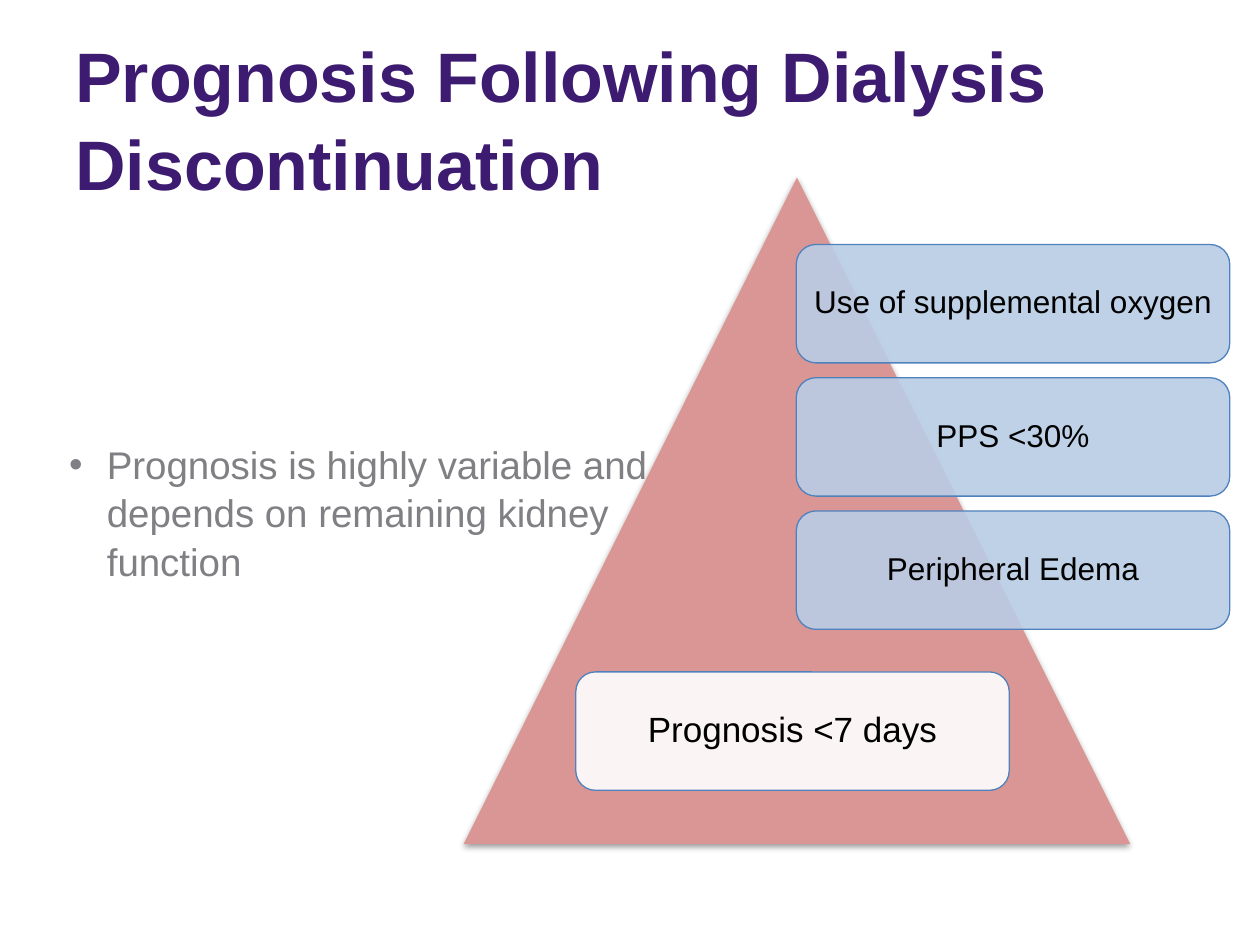
from lxml.etree import SubElement
from pptx import Presentation
from pptx.dml.color import RGBColor
from pptx.enum.shapes import MSO_SHAPE as Preset
from pptx.enum.text import MSO_ANCHOR as Anchor, PP_ALIGN as Align
from pptx.oxml import parse_xml
from pptx.oxml.ns import nsdecls, qn
from pptx.util import Inches, Pt

COLORS = {
    "title": "3C1B71",
    "body": "807F83",
    "text": "000000",
    "triangle": "D99694",
    "factor": "B9CDE5",
    "outcome": "FFFFFF",
    "border": "4F81BD",
}

presentation = Presentation()
presentation.slide_width, presentation.slide_height = Inches(10), Inches(7.5)
slide = presentation.slides.add_slide(presentation.slide_layouts[6])


def area(left, top, width, height):
    """Turn percentages of the slide's size into lengths."""
    column, row = presentation.slide_width / 100, presentation.slide_height / 100
    return [round(v) for v in (left * column, top * row, width * column, height * row)]


def write(shape, text, size, color, bold=False, align=Align.LEFT,
          anchor=Anchor.MIDDLE, spacing=1.05, margins=(0.1, 0.05), bullet=None):
    frame = shape.text_frame
    frame.word_wrap = True
    frame.vertical_anchor = anchor
    frame.margin_left = frame.margin_right = Inches(margins[0])
    frame.margin_top = frame.margin_bottom = Inches(margins[1])
    paragraph = frame.paragraphs[0]
    paragraph.alignment = align
    paragraph.line_spacing = spacing
    if bullet:
        properties = paragraph._p.get_or_add_pPr()
        properties.set("marL", str(Inches(0.5)))
        properties.set("indent", str(Inches(-0.3)))
        SubElement(properties, qn("a:buFont"), typeface="Arial")
        SubElement(properties, qn("a:buChar"), char=bullet)
    run = paragraph.add_run()
    run.text = text
    run.font.name = "Arial"
    run.font.size = Pt(size)
    run.font.bold = bold
    run.font.color.rgb = RGBColor.from_string(COLORS[color])


title = slide.shapes.add_textbox(*area(5, 4, 90, 16.67))
write(title, "Prognosis Following Dialysis Discontinuation", 40, "title", bold=True)

body = slide.shapes.add_textbox(*area(2.5, 45.73, 50, 16.67))
write(body, "Prognosis is highly variable and depends on remaining kidney function",
      22, "body", anchor=Anchor.TOP, bullet="•")

pyramid = slide.shapes.add_group_shape()
triangle = pyramid.shapes.add_shape(Preset.ISOSCELES_TRIANGLE, *area(36.8, 18.8, 52.9, 70.53))
triangle.fill.solid()
triangle.fill.fore_color.rgb = RGBColor.from_string(COLORS["triangle"])
triangle.line.fill.background()
triangle.element.spPr.append(parse_xml(
    f'<a:effectLst {nsdecls("a")}>'
    f'<a:outerShdw blurRad="{Pt(3.1)}" dist="{Pt(1.6)}" dir="5400000" rotWithShape="0">'
    '<a:srgbClr val="000000"><a:alpha val="38000"/></a:srgbClr>'
    '</a:outerShdw></a:effectLst>'))

factors = ["Use of supplemental oxygen", "PPS <30%", "Peripheral Edema"]
FACTOR_TOP, FACTOR_PITCH = 25.87, 14.1
boxes = [(text, 63.2, FACTOR_TOP + i * FACTOR_PITCH, "factor", 18, 0.07)
         for i, text in enumerate(factors)]
boxes.append(("Prognosis <7 days", 45.7, 71.1, "outcome", 20, 0.08))

for text, left, top, color, size, margin in boxes:
    box = pyramid.shapes.add_shape(Preset.ROUNDED_RECTANGLE, *area(left, top, 34.4, 12.53))
    box.shadow.inherit = False
    box.fill.solid()
    box.fill.fore_color.rgb = RGBColor.from_string(COLORS[color])
    fill_color = box.element.spPr.find(qn("a:solidFill")).find(qn("a:srgbClr"))
    SubElement(fill_color, qn("a:alpha"), val="90000")
    box.line.color.rgb = RGBColor.from_string(COLORS["border"])
    box.line.width = Pt(0.75)
    write(box, text, size, "text", align=Align.CENTER, spacing=0.9, margins=(margin, margin))

presentation.save("out.pptx")
